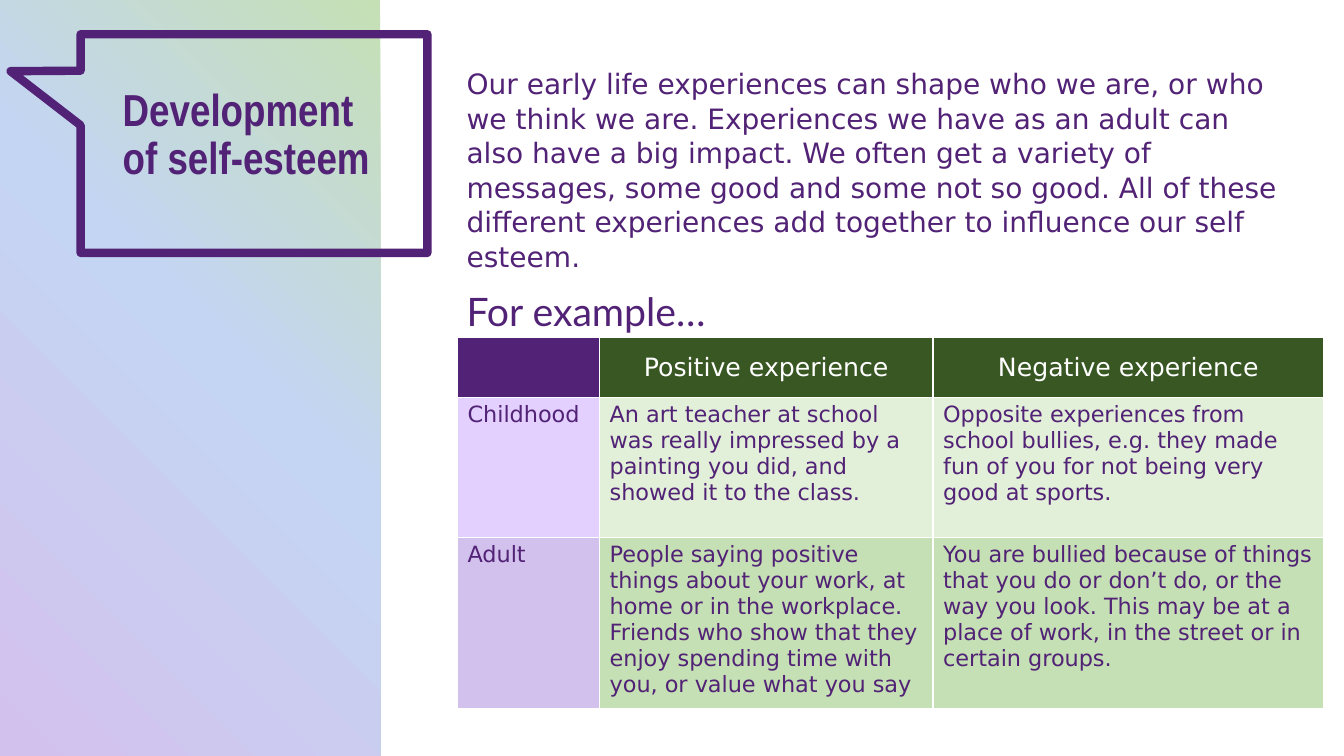
from lxml import etree
from pptx import Presentation
from pptx.dml.color import RGBColor
from pptx.enum import shapes, text
from pptx.oxml import ns
from pptx.util import Pt

PURPLE, LILAC, GREEN, WHITE = "512275", "D3C1ED", "C5E0B4", "FFFFFF"
FOREST, PALE, MIST = "385723", "E3D0FF", "E2F0D9"


def color(code):
    return RGBColor.from_string(code)


def write(par, words, size=16, font="DejaVu Sans", tint=PURPLE, bold=False,
          align=text.PP_ALIGN.LEFT, lead=1.0, gap=0):
    par.alignment = align
    par.line_spacing = lead
    par.space_before = Pt(gap)
    run = par.add_run()
    run.text = words
    run.font.size = Pt(size)
    run.font.name = font
    run.font.bold = bold
    run.font.color.rgb = color(tint)


def node(parent, tag, **attrs):
    return etree.SubElement(parent, ns.qn(tag), **attrs)


class Deck:
    def __init__(self, wide, high):
        self.file = Presentation()
        self.file.slide_width, self.file.slide_height = Pt(wide), Pt(high)
        self.slide = self.file.slides.add_slide(self.file.slide_layouts[6])

    def shape(self, kind, *box):
        item = self.slide.shapes.add_shape(kind, *map(Pt, box))
        item.shadow.inherit = False
        item.fill.background()
        item.line.fill.background()
        return item

    def panel(self, stops, *box):
        props = self.shape(shapes.MSO_SHAPE.RECTANGLE, *box)._element.spPr
        grad = etree.Element(ns.qn("a:gradFill"), rotWithShape="1")
        props.replace(props.find(ns.qn("a:noFill")), grad)
        marks = node(grad, "a:gsLst")
        for place, code in stops:
            mark = node(marks, "a:gs", pos=str(place * 1000))
            node(mark, "a:srgbClr", val=code)
        route = node(grad, "a:path", path="circle")
        node(route, "a:fillToRect", t="100000", r="100000")

    def callout(self, tip, *box):
        item = self.shape(shapes.MSO_SHAPE.RECTANGULAR_CALLOUT, *box)
        item.adjustments[0], item.adjustments[1] = tip
        item.line.color.rgb = color(PURPLE)
        item.line.width = Pt(6)

    def label(self, parts, *box, pad=3.6):
        frame = self.slide.shapes.add_textbox(*map(Pt, box)).text_frame
        frame.word_wrap = True
        frame.margin_top = frame.margin_bottom = Pt(pad)
        for i, (words, style) in enumerate(parts):
            par = frame.add_paragraph() if i else frame.paragraphs[0]
            write(par, words, **style)

    def edge(self, cell):
        props = cell._tc.get_or_add_tcPr()
        for i, side in enumerate("LRTB"):
            line = etree.Element(ns.qn(f"a:ln{side}"), w=str(Pt(1)))
            node(node(line, "a:solidFill"), "a:srgbClr", val=WHITE)
            props.insert(i, line)

    def table(self, rows, fills, cols, highs, left, top):
        grid = self.slide.shapes.add_table(
            len(rows), len(cols), Pt(left), Pt(top),
            Pt(sum(cols)), Pt(sum(highs))).table
        for col, wide in zip(grid.columns, cols):
            col.width = Pt(wide)
        for i, row in enumerate(rows):
            grid.rows[i].height = Pt(highs[i])
            for j, words in enumerate(row):
                cell = grid.cell(i, j)
                cell.fill.solid()
                cell.fill.fore_color.rgb = color(fills[i][min(j, 1)])
                self.edge(cell)
                style = {}
                if i == 0:
                    cell.vertical_anchor = text.MSO_ANCHOR.MIDDLE
                    style = dict(size=18, tint=WHITE, align=text.PP_ALIGN.CENTER)
                if words:
                    write(cell.text_frame.paragraphs[0], words, **style)


def main():
    deck = Deck(960, 540)
    deck.panel([(0, LILAC), (56, "C4D5F3"), (100, GREEN)], 0, 0, 271.5, 540)
    deck.callout((-0.702, -0.331), 57.6, 24.5, 247.7, 156.2)
    deck.label([("Development of self-esteem",
                 dict(size=32, font="Arial Narrow", bold=True, lead=0.9))],
               80.6, 55.4, 200.9, 95.8, pad=7.2)
    deck.label([
        ("Our early life experiences can shape who we are, or who we think we "
         "are. Experiences we have as an adult can also have a big impact. We "
         "often get a variety of messages, some good and some not so good. All "
         "of these different experiences add together to influence our self "
         "esteem.", dict(size=20, lead=1.03, gap=10)),
        ("For example…", dict(size=28, font="Lato", gap=10)),
    ], 326.2, 43.2, 595.4, 499)
    deck.table([
        ("", "Positive experience", "Negative experience"),
        ("Childhood",
         "An art teacher at school was really impressed by a painting you did, "
         "and showed it to the class.",
         "Opposite experiences from school bullies, e.g. they made fun of you "
         "for not being very good at sports."),
        ("Adult",
         "People saying positive things about your work, at home or in the "
         "workplace. Friends who show that they enjoy spending time with you, "
         "or value what you say",
         "You are bullied because of things that you do or don’t do, or the way "
         "you look. This may be at a place of work, in the street or in certain "
         "groups."),
    ], [(PURPLE, FOREST), (PALE, MIST), (LILAC, GREEN)],
        (101.5, 238.2, 279), (42.5, 100, 118), 326.8, 241.2)
    deck.file.save("out.pptx")


if __name__ == "__main__":
    main()
